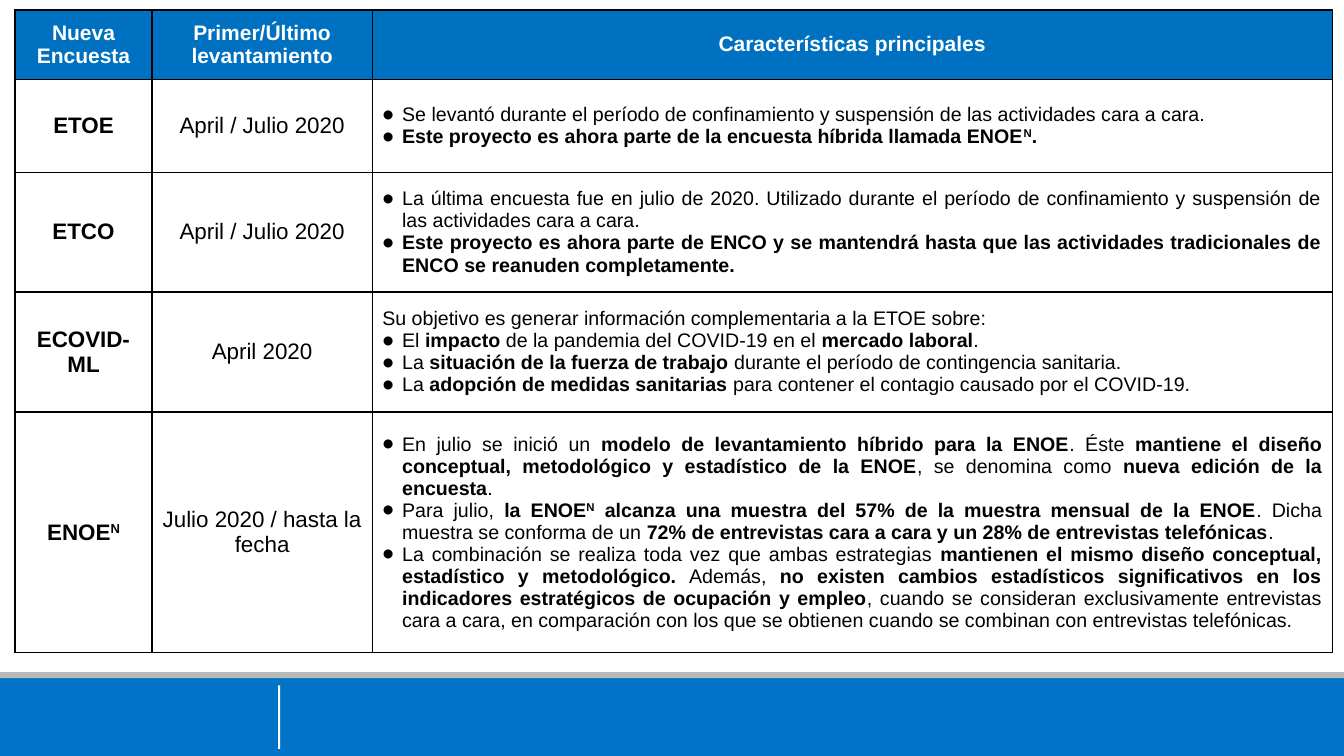
"""Build the slide that compares the new surveys and their main features."""
from lxml import etree
from pptx import Presentation
from pptx import util as u
from pptx.dml.color import RGBColor
from pptx.enum import shapes, text
from pptx.oxml import ns

COLORS = {"header": "0070C0", "footer": "0174C8", "stripe": "B9BBBB",
          "white": "FFFFFF", "black": "000000"}
COLUMN_WIDTHS = [3.45, 5.55, 24.19]
ROW_HEIGHTS = [1.75, 2.34, 3.02, 3.02, 6.07]

# Asterisks enclose bold text, carets enclose superscripts, "• " opens a bullet.
ROWS = [
    ["*Nueva Encuesta*", "*Primer/Último levantamiento*", "*Características principales*"],
    ["*ETOE*", "April / Julio 2020",
     "• Se levantó durante el período de confinamiento y suspensión de las actividades "
     "cara a cara.\n"
     "• *Este proyecto es ahora parte de la encuesta híbrida llamada ENOE^N^.*"],
    ["*ETCO*", "April / Julio 2020",
     "• La última encuesta fue en julio de 2020. Utilizado durante el período de "
     "confinamiento y suspensión de las actividades cara a cara.\n"
     "• *Este proyecto es ahora parte de ENCO y se mantendrá hasta que las actividades "
     "tradicionales de ENCO se reanuden completamente.*"],
    ["*ECOVID-ML*", "April 2020",
     "Su objetivo es generar información complementaria a la ETOE sobre:\n"
     "• El *impacto* de la pandemia del COVID-19 en el *mercado laboral*.\n"
     "• La *situación de la fuerza de trabajo* durante el período de contingencia sanitaria.\n"
     "• La *adopción de medidas sanitarias* para contener el contagio causado por el COVID-19."],
    ["*ENOE^N^*", "Julio 2020 / hasta la fecha",
     "• En julio se inició un *modelo de levantamiento híbrido para la ENOE*. Éste *mantiene "
     "el diseño conceptual, metodológico y estadístico de la ENOE*, se denomina como *nueva "
     "edición de la encuesta*.\n"
     "• Para julio, *la ENOE^N^ alcanza una muestra del 57% de la muestra mensual de la "
     "ENOE*. Dicha muestra se conforma de un *72% de entrevistas cara a cara y un 28% de "
     "entrevistas telefónicas*.\n"
     "• La combinación se realiza toda vez que ambas estrategias *mantienen el mismo diseño "
     "conceptual, estadístico y metodológico.* Además, *no existen cambios estadísticos "
     "significativos en los indicadores estratégicos de ocupación y empleo*, cuando se "
     "consideran exclusivamente entrevistas cara a cara, en comparación con los que se "
     "obtienen cuando se combinan con entrevistas telefónicas."],
]


def add_element(parent, tag, **attributes):
    return etree.SubElement(parent, ns.qn(tag), attributes)


def write_paragraph(paragraph, line, size, color, alignment):
    paragraph.alignment = alignment
    if line.startswith("• "):
        properties = paragraph._p.get_or_add_pPr()
        properties.set("marL", str(u.Cm(0.5)))
        properties.set("indent", str(u.Cm(-0.5)))
        add_element(properties, "a:buSzPct", val="170000")
        add_element(properties, "a:buFont", typeface="Arial")
        add_element(properties, "a:buChar", char="•")
    paragraph.font.name = "Arial"
    paragraph.font.size = u.Pt(size)
    paragraph.font.color.rgb = RGBColor.from_string(color)
    for bold_index, part in enumerate(line.removeprefix("• ").split("*")):
        for raised_index, piece in enumerate(part.split("^")):
            if piece:
                run = paragraph.add_run()
                run.text = piece
                run.font.bold = bold_index % 2 == 1
                if raised_index % 2:
                    run._r.get_or_add_rPr().set("baseline", "30000")


presentation = Presentation()
presentation.slide_width = u.Cm(33.87)
presentation.slide_height = u.Cm(19.05)
slide = presentation.slides.add_slide(presentation.slide_layouts[6])

for left, top, width, height, color in [
    (0, 17.06, 33.87, 1.99, "footer"),
    (0, 16.94, 33.87, 0.15, "stripe"),
    (7.01, 17.27, 0.05, 1.6, "white"),
]:
    bar = slide.shapes.add_shape(shapes.MSO_SHAPE.RECTANGLE, u.Cm(left), u.Cm(top),
                                 u.Cm(width), u.Cm(height))
    bar.shadow.inherit = False
    bar.fill.solid()
    bar.fill.fore_color.rgb = RGBColor.from_string(COLORS[color])
    bar.line.fill.background()

table = slide.shapes.add_table(len(ROWS), len(COLUMN_WIDTHS), u.Cm(0.38), u.Cm(0.25),
                               u.Cm(sum(COLUMN_WIDTHS)), u.Cm(sum(ROW_HEIGHTS))).table
table.first_row = False
table.horz_banding = False
for column, width in zip(table.columns, COLUMN_WIDTHS):
    column.width = u.Cm(width)
for row, height in zip(table.rows, ROW_HEIGHTS):
    row.height = u.Cm(height)

for row_index, contents in enumerate(ROWS):
    is_header = row_index == 0
    for column_index, content in enumerate(contents):
        cell = table.cell(row_index, column_index)
        cell.vertical_anchor = text.MSO_ANCHOR.MIDDLE
        for side in ("a:lnL", "a:lnR", "a:lnT", "a:lnB"):
            border = add_element(cell._tc.get_or_add_tcPr(), side, w=str(u.Pt(1)))
            add_element(add_element(border, "a:solidFill"), "a:srgbClr", val=COLORS["black"])
        if is_header:
            cell.fill.solid()
            cell.fill.fore_color.rgb = RGBColor.from_string(COLORS["header"])
        else:
            cell.fill.background()
        is_feature = column_index == 2 and not is_header
        size = 15 if is_header else 14 if is_feature else 16
        color = COLORS["white" if is_header else "black"]
        alignment = text.PP_ALIGN.JUSTIFY if is_feature else text.PP_ALIGN.CENTER
        for line_index, line in enumerate(content.split("\n")):
            frame = cell.text_frame
            paragraph = frame.add_paragraph() if line_index else frame.paragraphs[0]
            write_paragraph(paragraph, line, size, color, alignment)

presentation.save("out.pptx")
